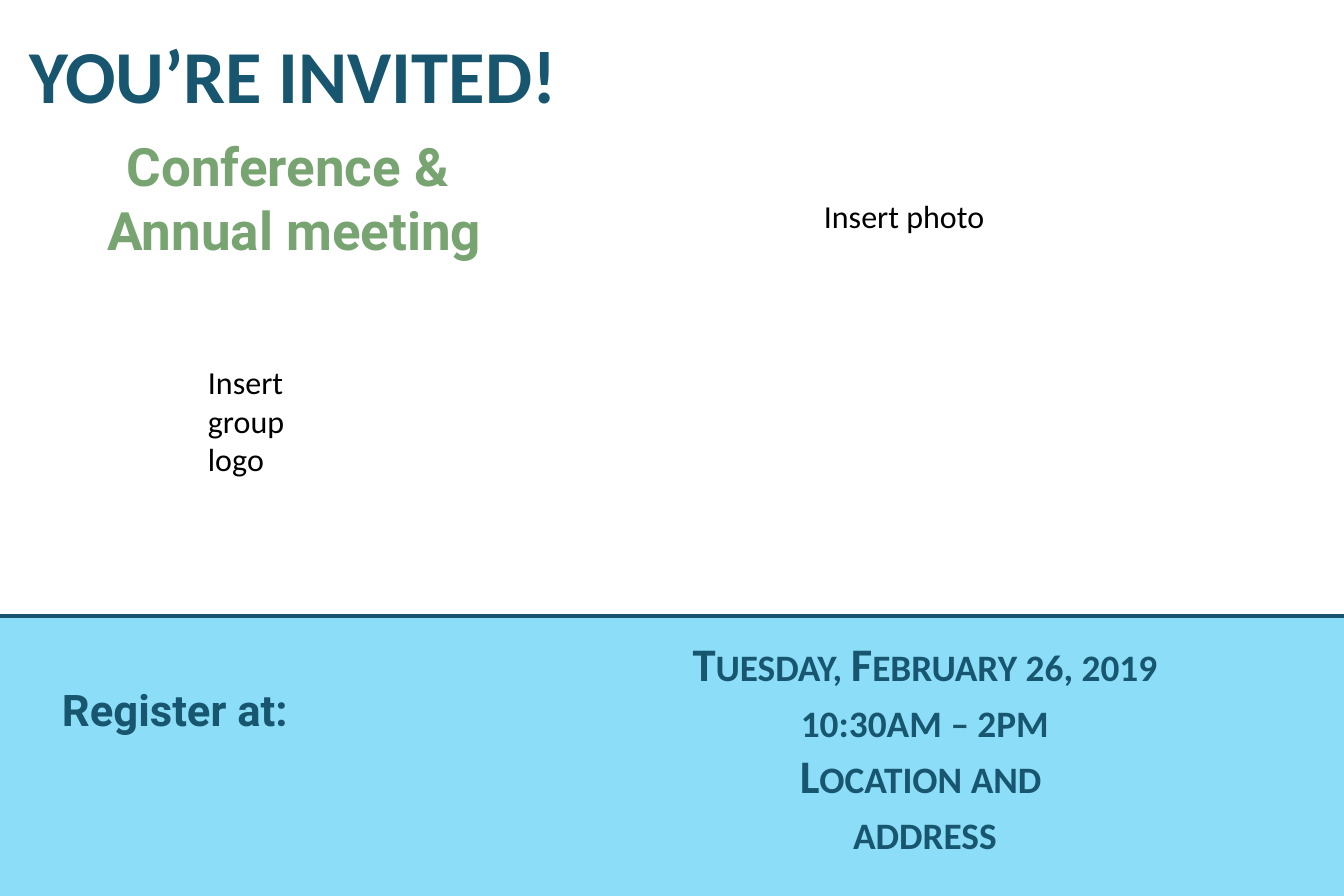
from lxml import etree
from pptx import Presentation
from pptx.dml.color import RGBColor
from pptx.enum.shapes import MSO_CONNECTOR, MSO_SHAPE
from pptx.enum.text import MSO_AUTO_SIZE, PP_ALIGN
from pptx.oxml.ns import qn
from pptx.util import Pt

RECTANGLE = MSO_SHAPE.RECTANGLE
STRAIGHT = MSO_CONNECTOR.STRAIGHT
GROW = MSO_AUTO_SIZE.SHAPE_TO_FIT_TEXT
LEFT, CENTER = PP_ALIGN.LEFT, PP_ALIGN.CENTER

COLORS = {"navy": "17566E", "green": "78A471", "sky": "60D2F6", "black": "000000"}
WIDTH, HEIGHT, BAND_TOP = 1344, 896, 616
BAND_OPACITY = 72
TIGHT, NORMAL = (20, 9), (22, 11)

STYLES = {
    "title": dict(font="Calibri", size=24, color="navy", bold=True, align=LEFT, inset=TIGHT, wrap=False),
    "event": dict(font="Roboto", size=17, color="green", bold=True, align=CENTER, inset=TIGHT),
    "register": dict(font="Roboto", size=14, color="navy", bold=True, align=LEFT, inset=NORMAL),
    "details": dict(font="Calibri", size=15, color="navy", bold=True, align=CENTER, inset=TIGHT, small_caps=True),
    "prompt": dict(font="Calibri", size=10.3, color="black", bold=False, align=LEFT, inset=NORMAL),
}

TEXTS = [
    ("title", (9, 20, 573, 110), ["YOU’RE INVITED!"]),
    ("event", (-65, 125, 719, 148), ["Conference & ", "Annual meeting"]),
    ("register", (40, 672, 576, 76), ["Register at:"]),
    ("details", (430, 626, 990, 242),
     ["Tuesday, February 26, 2019", "10:30am – 2pm", "Location and ", "address"]),
    ("prompt", (186, 352, 159, 139), ["Insert group logo"]),
    ("prompt", (802, 186, 430, 60), ["Insert photo"]),
]


def px(length):
    return round(length * 914400 / 224)


def rgb(name):
    return RGBColor.from_string(COLORS[name])


def add_text(page, style_name, place, lines):
    style = STYLES[style_name]
    box = page.shapes.add_textbox(*map(px, place))
    frame = box.text_frame
    frame.word_wrap = style.get("wrap", True)
    frame.auto_size = GROW
    side, end = map(px, style["inset"])
    frame.margin_left = frame.margin_right = side
    frame.margin_top = frame.margin_bottom = end
    for index, line in enumerate(lines):
        para = frame.add_paragraph() if index else frame.paragraphs[0]
        para.alignment = style["align"]
        span = para.add_run()
        span.text = line
        span.font.name = style["font"]
        span.font.size = Pt(style["size"])
        span.font.bold = style["bold"]
        span.font.color.rgb = rgb(style["color"])
        if style.get("small_caps"):
            span._r.get_or_add_rPr().set("cap", "small")


def add_band(page):
    band = page.shapes.add_shape(RECTANGLE, 0, px(BAND_TOP), px(WIDTH), px(HEIGHT - BAND_TOP))
    band.shadow.inherit = False
    band.line.fill.background()
    band.fill.solid()
    band.fill.fore_color.rgb = rgb("sky")
    color = band._element.spPr.find(qn("a:solidFill")).find(qn("a:srgbClr"))
    etree.SubElement(color, qn("a:alpha")).set("val", str(BAND_OPACITY * 1000))


def add_rule(page):
    rule = page.shapes.add_connector(STRAIGHT, 0, px(BAND_TOP), px(WIDTH), px(BAND_TOP))
    rule.line.color.rgb = rgb("navy")
    rule.line.width = Pt(1.25)
    etree.SubElement(rule._element.spPr, qn("a:effectLst"))


def main():
    deck = Presentation()
    deck.slide_width, deck.slide_height = px(WIDTH), px(HEIGHT)
    page = deck.slides.add_slide(deck.slide_layouts[6])
    add_band(page)
    add_rule(page)
    for style_name, place, lines in TEXTS:
        add_text(page, style_name, place, lines)
    deck.save("out.pptx")


if __name__ == "__main__":
    main()
